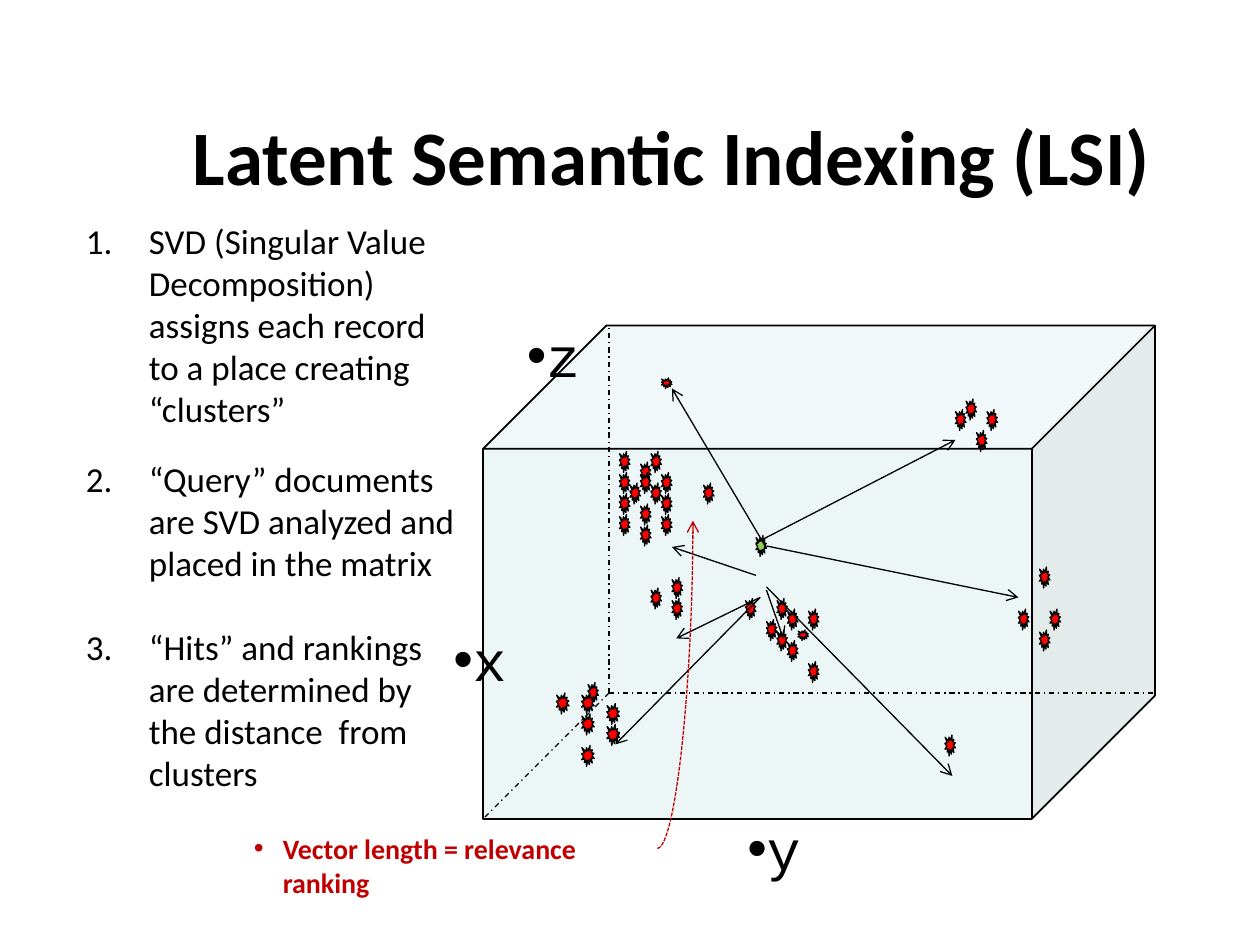
from lxml.etree import SubElement
from pptx import Presentation
from pptx.dml.color import RGBColor
from pptx.enum.dml import MSO_LINE
from pptx.enum.shapes import MSO_CONNECTOR, MSO_SHAPE
from pptx.enum.text import MSO_ANCHOR, PP_ALIGN
from pptx.oxml.ns import qn
from pptx.util import Inches, Pt

BLACK = RGBColor(0, 0, 0)
RED = RGBColor(0xFF, 0, 0)
DARK_RED = RGBColor(0xC0, 0, 0)
GREEN = RGBColor(0x92, 0xD0, 0x50)
PALE_BLUE = RGBColor(0xBB, 0xE0, 0xE3)

prs = Presentation()
prs.slide_width, prs.slide_height = Inches(10), Inches(7.5)
s = prs.slides.add_slide(prs.slide_layouts[6])
U = prs.slide_width / 120


def add_text(text, box, size, font="Calibri", color=BLACK, bold=False, wrap=True,
             align=PP_ALIGN.LEFT, anchor=MSO_ANCHOR.TOP, bullet=None, start=None, indent=0):
    tf = s.shapes.add_textbox(*(int(v * U) for v in box)).text_frame
    tf.word_wrap = wrap
    tf.vertical_anchor = anchor
    p = tf.paragraphs[0]
    p.alignment = align
    pPr = p._p.get_or_add_pPr()
    pPr.set("marL", str(Inches(indent)))
    pPr.set("indent", str(-Inches(indent)))
    if bullet:
        SubElement(pPr, qn("a:buFont"), typeface="Arial")
        SubElement(pPr, qn("a:buChar"), char=bullet)
    if start:
        SubElement(pPr, qn("a:buFont"), typeface="+mj-lt")
        SubElement(pPr, qn("a:buAutoNum"), type="arabicPeriod", startAt=str(start))
    r = p.add_run()
    r.text = text
    r.font.size, r.font.name, r.font.bold = Pt(size), font, bold
    r.font.color.rgb = color


def add_line(shapes, ends, color=BLACK, dash=None, arrow=False, kind=MSO_CONNECTOR.STRAIGHT):
    line = shapes.add_connector(kind, *(int(v * U) for v in ends))
    line.line.color.rgb = color
    line.line.width = Pt(0.75)
    if dash:
        line.line.dash_style = dash
    if arrow:
        SubElement(line.line._get_or_add_ln(), qn("a:tailEnd"), type="arrow")
    SubElement(line._element.spPr, qn("a:effectLst"))
    return line


add_text("Latent Semantic Indexing (LSI)", (10, 10.5, 108, 8.5), 44, bold=True,
         align=PP_ALIGN.CENTER, anchor=MSO_ANCHOR.MIDDLE)

cube = s.shapes.add_shape(MSO_SHAPE.CUBE, *(int(v * U) for v in (46, 31, 64, 47)))
cube.shadow.inherit = False
cube.adjustments[0] = 0.25
cube.fill.solid()
cube.fill.fore_color.rgb = PALE_BLUE
SubElement(cube._element.spPr.find(qn("a:solidFill"))[0], qn("a:alpha"), val="26000")
cube.line.color.rgb = BLACK
cube.line.width = Pt(1)

for axis, x, y in (("x", 42, 59), ("y", 70, 77), ("z", 49, 30)):
    add_text(axis, (x, y, 4.1, 6.1), 32, font="Courier New", wrap=False, bullet="•")

for end in ((46, 78), (58, 31), (110, 66)):
    add_line(s.shapes, (58, 66, *end), dash=MSO_LINE.DASH_DOT)

clusters = [
    (RED, 1, 2, [(59, 45), (60, 46), (61, 48), (63, 47), (59, 49), (61, 44), (59, 43),
                 (61, 45), (62, 43), (61, 50), (62, 46), (63, 45), (59, 47), (67, 46), (63, 49)]),
    (RED, 1, 1, [(63, 36)]),
    (RED, 1, 2, [(99, 54), (97, 58), (99, 60), (100, 58)]),
    (RED, 1, 2, [(92, 38), (91, 39), (93, 41), (94, 39)]),
    (RED, 1, 2, [(56, 65)]),
    (RED, 1, 2, [(90, 70)]),
    (RED, 1.2, 2, [(53, 66), (55.4, 68), (57.8, 69), (55.4, 66), (55.4, 71), (57.8, 67)]),
    (RED, 1, 2, [(62, 56), (64, 57), (64, 55)]),
    (RED, 1, 2, [(77, 58), (74, 60), (75, 58), (74, 57), (71, 57), (73, 59), (75, 61), (77, 63)]),
    (RED, 1, 1, [(76, 60)]),
    (GREEN, 1, 2, [(72, 51)]),
]
for color, w, h, places in clusters:
    shapes = s.shapes.add_group_shape().shapes if len(places) > 1 else s.shapes
    for x, y in places:
        sp = shapes.add_shape(MSO_SHAPE.EXPLOSION1, *(int(v * U) for v in (x, y, w, h)))
        sp.shadow.inherit = False
        sp.fill.solid()
        sp.fill.fore_color.rgb = color
        sp.line.color.rgb = BLACK
        sp.line.width = Pt(0.75)

steps = [
    ("SVD (Singular Value Decomposition) assigns each record to a place creating “clusters”",
     20.3, 38, 21.4),
    ("“Query” documents are SVD analyzed and placed in the matrix", 43, 38, 13.3),
    ("“Hits” and rankings are determined by the distance  from clusters", 59, 35, 17.4),
]
for number, (text, y, w, h) in enumerate(steps, 1):
    add_text(text, (7, y, w, h), 20, start=number, indent=0.5)

vectors = s.shapes.add_group_shape().shapes
for ends in (
    (72, 54.8, 64, 52.1), (73, 56.2, 74.6, 60.8), (72.4, 56.9, 64.4, 60.8),
    (72.4, 56.9, 58.6, 70.9), (72, 51.7, 91, 41.9), (73, 52.2, 64, 37),
    (73, 52, 97, 56.9), (73, 55.9, 90.7, 73.9),
):
    add_line(vectors, ends, arrow=True)

add_text("Vector length = relevance ranking", (23, 78.6, 39.7, 4.4), 16, color=DARK_RED,
         bold=True, bullet="•", indent=0.23)
curve = add_line(s.shapes, (62.6, 80.8, 66, 49.6), color=DARK_RED, dash=MSO_LINE.SQUARE_DOT,
                 arrow=True, kind=MSO_CONNECTOR.CURVE)
curve._element.spPr.find(qn("a:prstGeom")).set("prst", "curvedConnector2")

prs.save("out.pptx")
